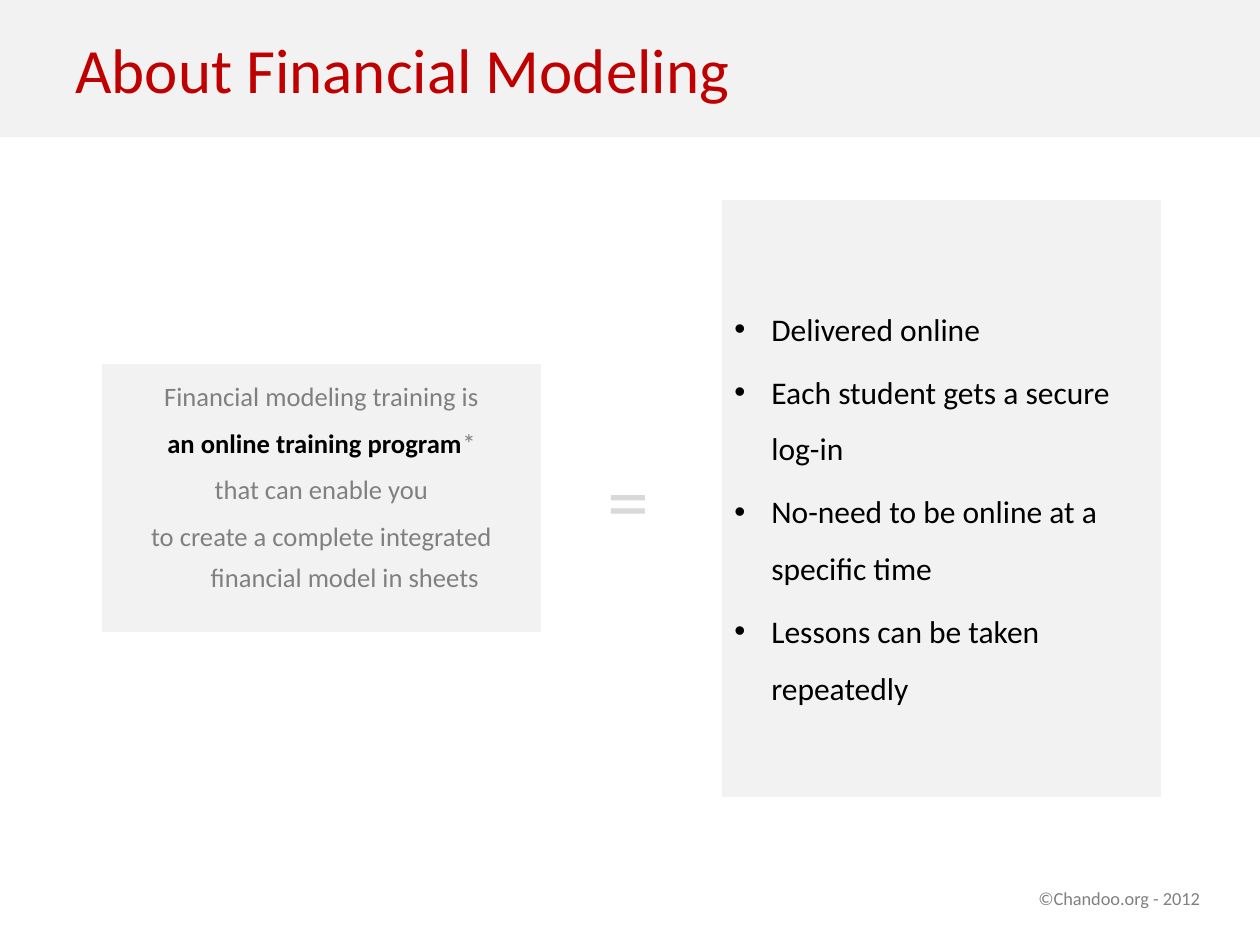
from lxml.etree import SubElement
from pptx import Presentation
from pptx.dml.color import RGBColor
from pptx.enum.shapes import MSO_SHAPE
from pptx.enum.text import MSO_ANCHOR, PP_ALIGN
from pptx.oxml.ns import qn
from pptx.util import Pt

EMU_PER_PX = 914400 / 126
PANEL, RED, GREY, LIGHT_GREY, BLACK = "F2F2F2", "C00000", "808080", "D9D9D9", "000000"


def px(length):
    return round(length * EMU_PER_PX)


def color(hex_code):
    return RGBColor.from_string(hex_code)


def add_panel(slide, box):
    shape = slide.shapes.add_shape(MSO_SHAPE.RECTANGLE, *map(px, box))
    shape.shadow.inherit = False
    shape.fill.solid()
    shape.fill.fore_color.rgb = color(PANEL)
    shape.line.fill.background()
    return shape


def write(shape, paragraphs, size, text_color, anchor=MSO_ANCHOR.TOP, align=PP_ALIGN.LEFT,
          line_spacing=1.0, space_before=0, hanging=0, bullet=None, wrap=True):
    """Fill a shape; each paragraph is a list of (text, overrides) runs."""
    frame = shape.text_frame
    frame.word_wrap = wrap
    frame.vertical_anchor = anchor
    for index, runs in enumerate(paragraphs):
        paragraph = frame.add_paragraph() if index else frame.paragraphs[0]
        properties = paragraph._p.get_or_add_pPr()
        if hanging:
            properties.set("marL", str(px(hanging)))
            properties.set("indent", str(-px(hanging)))
        if bullet:
            SubElement(properties, qn("a:buFont")).set("typeface", "Arial")
            SubElement(properties, qn("a:buChar")).set("char", bullet)
        paragraph.alignment = align
        paragraph.line_spacing = line_spacing
        if index:
            paragraph.space_before = Pt(space_before)
        for text, overrides in runs:
            run = paragraph.add_run()
            run.text = text
            run.font.name = "Calibri"
            run.font.size = Pt(size)
            run.font.bold = overrides.get("bold", False)
            run.font.color.rgb = color(overrides.get("color", text_color))


def plain(*lines):
    return [[(line, {})] for line in lines]


def add_label(slide, box, text, size, text_color, **text_format):
    label = slide.shapes.add_textbox(*map(px, box))
    write(label, plain(text), size, text_color, **text_format)


def add_header(slide, box):
    left, top, width, height = box
    add_panel(slide, box)
    add_label(slide, (left + 63, top, width - 126, height), "About Financial Modeling",
              36, RED, anchor=MSO_ANCHOR.MIDDLE)


def add_definition(slide, box):
    paragraphs = [
        *plain("Financial modeling training is"),
        [("an online training program", {"bold": True, "color": BLACK}), ("*", {})],
        *plain("that can enable you",
               "to create a complete integrated financial model in sheets"),
    ]
    write(add_panel(slide, box), paragraphs, 15.2, GREY, align=PP_ALIGN.CENTER,
          line_spacing=1.3, space_before=3, hanging=47)


def add_features(slide, box):
    features = plain("Delivered online", "Each student gets a secure log-in",
                     "No-need to be online at a specific time",
                     "Lessons can be taken repeatedly")
    write(add_panel(slide, box), features, 18, BLACK, anchor=MSO_ANCHOR.MIDDLE,
          line_spacing=1.5, space_before=3.6, hanging=37, bullet="•")


def main():
    presentation = Presentation()
    presentation.slide_width, presentation.slide_height = px(1260), px(945)
    slide = presentation.slides.add_slide(presentation.slide_layouts[6])
    add_header(slide, (0, 0, 1260, 137))
    add_definition(slide, (102, 364, 439, 268))
    add_features(slide, (722, 200, 439, 597))
    add_label(slide, (595, 441, 68, 115), "=", 48, LIGHT_GREY, wrap=False)
    add_label(slide, (1026, 881, 190, 35), "©Chandoo.org - 2012", 10.5, GREY, wrap=False)
    presentation.save("out.pptx")


if __name__ == "__main__":
    main()
